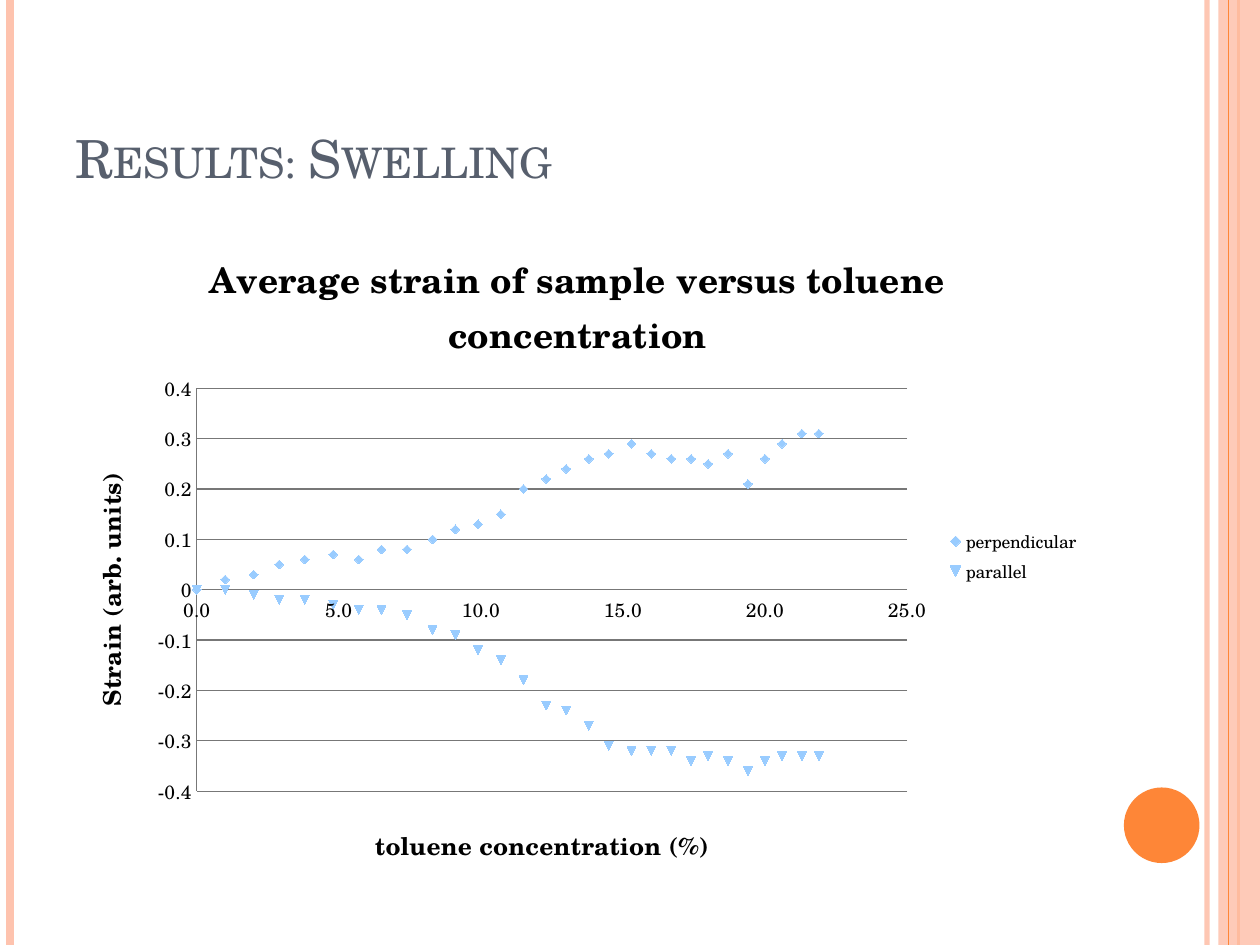
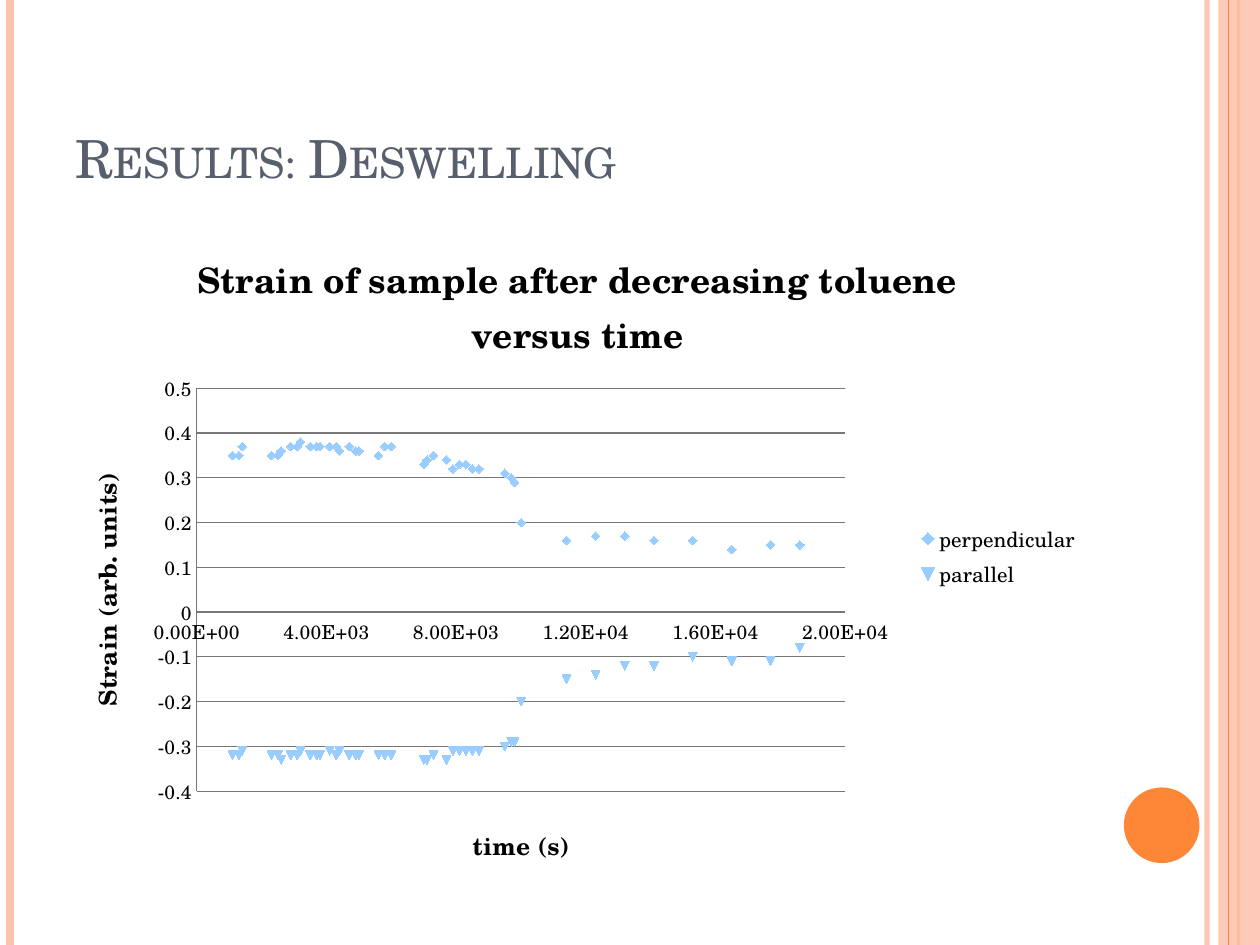
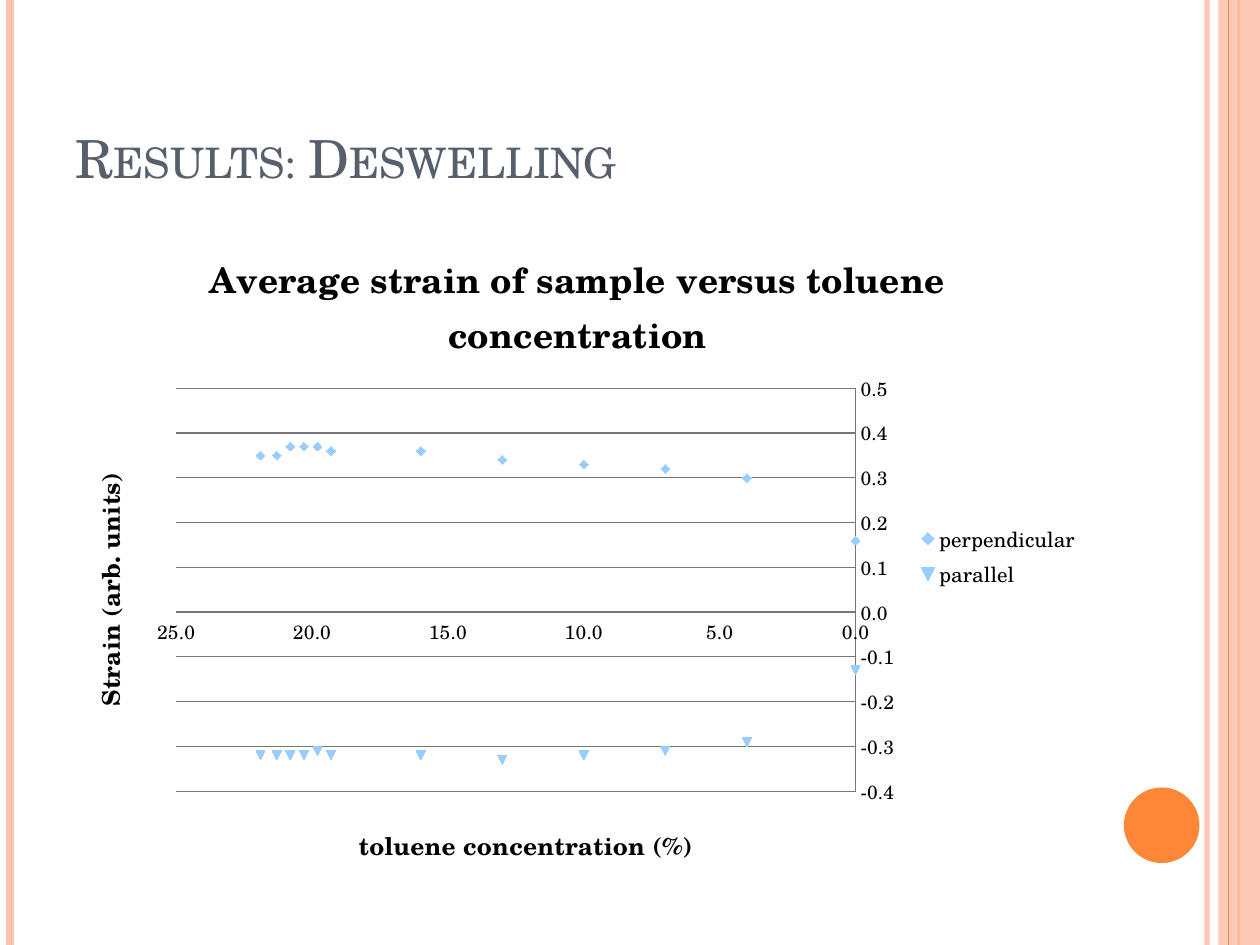
import dataclasses

import pptx
import pptx.chart.data
import pptx.dml.color
import pptx.enum.chart
import pptx.enum.shapes
import pptx.enum.text
import pptx.oxml
import pptx.oxml.ns
import pptx.util

Inches = pptx.util.Inches
Pt = pptx.util.Pt


@dataclasses.dataclass(frozen=True)
class Theme:
    font: str = "TeX Gyre Schola"
    heading: str = "575F6D"
    text: str = "000000"
    accent: str = "FE8637"
    pale: str = "FEC3AE"
    marker: str = "99CCFF"
    grid: str = "777777"
    heading_size: float = 30
    chart_title_size: float = 20
    axis_title_size: float = 14
    tick_size: float = 11
    chart_size: float = 10


@dataclasses.dataclass(frozen=True)
class Scale:
    title: str
    low: float
    high: float
    step: float
    number_format: str = "General"
    reverse: bool = False


@dataclasses.dataclass(frozen=True)
class Result:
    heading: str
    chart_title: str
    horizontal: Scale
    vertical: Scale
    plot_area: tuple  # left, top, width, height as shares of the chart
    legend_size: float
    x: list
    strains: dict


THEME = Theme()
WIDTH, HEIGHT = Inches(10), Inches(7.5)
LEFT, CONTENT_WIDTH = Inches(0.5), Inches(8.17)

SWELLING_X = [
    0, 1, 2, 2.9, 3.8, 4.8, 5.7, 6.5, 7.4, 8.3, 9.1, 9.9, 10.7, 11.5, 12.3,
    13, 13.8, 14.5, 15.3, 16, 16.7, 17.4, 18, 18.7, 19.4, 20, 20.6, 21.3, 21.9]
SWELLING = {
    "perpendicular": [
        0, 0.02, 0.03, 0.05, 0.06, 0.07, 0.06, 0.08, 0.08, 0.1, 0.12, 0.13,
        0.15, 0.2, 0.22, 0.24, 0.26, 0.27, 0.29, 0.27, 0.26, 0.26, 0.25, 0.27,
        0.21, 0.26, 0.29, 0.31, 0.31],
    "parallel": [
        0, 0, -0.01, -0.02, -0.02, -0.03, -0.04, -0.04, -0.05, -0.08, -0.09,
        -0.12, -0.14, -0.18, -0.23, -0.24, -0.27, -0.31, -0.32, -0.32, -0.32,
        -0.34, -0.33, -0.34, -0.36, -0.34, -0.33, -0.33, -0.33],
}
TIME_X = [
    1100, 1300, 1400, 2300, 2500, 2600, 2900, 3100, 3200, 3500, 3700, 3800,
    4100, 4300, 4400, 4700, 4900, 5000, 5600, 5800, 6000, 7000, 7100, 7300,
    7700, 7900, 8100, 8300, 8500, 8700, 9500, 9700, 9800, 10000, 11400, 12300,
    13200, 14100, 15300, 16500, 17700, 18600]
TIME = {
    "perpendicular": [
        0.35, 0.35, 0.37, 0.35, 0.35, 0.36, 0.37, 0.37, 0.38, 0.37, 0.37, 0.37,
        0.37, 0.37, 0.36, 0.37, 0.36, 0.36, 0.35, 0.37, 0.37, 0.33, 0.34, 0.35,
        0.34, 0.32, 0.33, 0.33, 0.32, 0.32, 0.31, 0.3, 0.29, 0.2, 0.16, 0.17,
        0.17, 0.16, 0.16, 0.14, 0.15, 0.15],
    "parallel": [
        -0.32, -0.32, -0.31, -0.32, -0.32, -0.33, -0.32, -0.32, -0.31, -0.32,
        -0.32, -0.32, -0.31, -0.32, -0.31, -0.32, -0.32, -0.32, -0.32, -0.32,
        -0.32, -0.33, -0.33, -0.32, -0.33, -0.31, -0.31, -0.31, -0.31, -0.31,
        -0.3, -0.29, -0.29, -0.2, -0.15, -0.14, -0.12, -0.12, -0.1, -0.11,
        -0.11, -0.08],
}
DESWELLING_X = [21.9, 21.3, 20.8, 20.3, 19.8, 19.3, 16, 13, 10, 7, 4, 0]
DESWELLING = {
    "perpendicular": [
        0.35, 0.35, 0.37, 0.37, 0.37, 0.36, 0.36, 0.34, 0.33, 0.32, 0.3, 0.16],
    "parallel": [
        -0.32, -0.32, -0.32, -0.32, -0.31, -0.32, -0.32, -0.33, -0.32, -0.31,
        -0.29, -0.13],
}

STRAIN = "Strain (arb. units)"
TOLUENE = "toluene concentration (%)"
TOLUENE_CHART = "Average strain of sample versus toluene concentration"
RESULTS = [
    Result("Results: Swelling", TOLUENE_CHART,
           Scale(TOLUENE, 0, 25, 5, "0.0"), Scale(STRAIN, -0.4, 0.4, 0.1),
           (0.13, 0.25, 0.69, 0.6), 10, SWELLING_X, SWELLING),
    Result("Results: Deswelling",
           "Strain of sample after decreasing toluene versus time",
           Scale("time (s)", 0, 20000, 4000, "0.00E+00"),
           Scale(STRAIN, -0.4, 0.5, 0.1),
           (0.13, 0.25, 0.63, 0.6), 12, TIME_X, TIME),
    Result("Results: Deswelling", TOLUENE_CHART,
           Scale(TOLUENE, 0, 25, 5, "0.0", reverse=True),
           Scale(STRAIN, -0.4, 0.5, 0.1, "0.0"),
           (0.11, 0.25, 0.66, 0.6), 12, DESWELLING_X, DESWELLING),
]


def rgb(code):
    return pptx.dml.color.RGBColor.from_string(code)


def set_font(font, size, color=THEME.text, bold=False):
    font.name = THEME.font
    font.size = Pt(size)
    font.bold = bold
    font.color.rgb = rgb(color)


def set_opacity(shape, percent):
    color = shape.element.xpath("./p:spPr//a:srgbClr")[0]
    alpha = pptx.oxml.parse_xml(
        f'<a:alpha {pptx.oxml.ns.nsdecls("a")} val="{percent * 1000}"/>')
    color.append(alpha)


def add_stripe(shapes, x, color, weight, opacity=100):
    """Draw a thin vertical line over the whole height of the slide."""
    stripe = shapes.add_connector(
        pptx.enum.shapes.MSO_CONNECTOR.STRAIGHT, Inches(x), 0, Inches(x), HEIGHT)
    stripe.line.color.rgb = rgb(color)
    stripe.line.width = Pt(weight)
    no_effects = pptx.oxml.parse_xml(
        f'<a:effectLst {pptx.oxml.ns.nsdecls("a")}/>')
    stripe.element.spPr.append(no_effects)
    if opacity < 100:
        set_opacity(stripe, opacity)
    return stripe


def add_solid(shapes, kind, left, top, width, height, color):
    solid = shapes.add_shape(kind, left, top, width, height)
    solid.shadow.inherit = False
    solid.fill.solid()
    solid.fill.fore_color.rgb = rgb(color)
    solid.line.fill.background()
    return solid


def decorate_master(master, slide):
    """Draw the shared bands on a slide, then move them behind the master's text."""
    kinds = pptx.enum.shapes.MSO_SHAPE
    shapes = slide.shapes
    decoration = [
        add_stripe(shapes, 9.58, THEME.pale, 3, opacity=93),
        add_stripe(shapes, 0.08, THEME.pale, 4.5),
        add_stripe(shapes, 9.83, THEME.accent, 1.5),
    ]
    band = add_solid(shapes, kinds.RECTANGLE, Inches(9.67), 0,
                     WIDTH - Inches(9.67), HEIGHT, THEME.pale)
    set_opacity(band, 87)
    decoration += [
        band,
        add_stripe(shapes, 9.75, THEME.accent, 0.75),
        add_solid(shapes, kinds.OVAL, Inches(8.92), Inches(6.25),
                  Inches(0.6), Inches(0.6), THEME.accent),
    ]
    for order, part in enumerate(decoration):
        part.element.xpath(".//p:cNvPr")[0].set("id", str(100 + order))
        master.shapes.element.insert(2 + order, part.element)


def add_heading(slide, words):
    heading = slide.shapes.title
    heading.left, heading.top = LEFT, Inches(0.3)
    heading.width, heading.height = CONTENT_WIDTH, Inches(1.25)
    frame = heading.text_frame
    frame.auto_size = pptx.enum.text.MSO_AUTO_SIZE.NONE
    frame.vertical_anchor = pptx.enum.text.MSO_ANCHOR.BOTTOM
    paragraph = frame.paragraphs[0]
    paragraph.alignment = pptx.enum.text.PP_ALIGN.LEFT
    run = paragraph.add_run()
    run.text = words
    set_font(run.font, THEME.heading_size, THEME.heading)
    run.font._element.set("cap", "small")


def write_chart_text(frame, words, size):
    run = frame.paragraphs[0].add_run()
    run.text = words
    set_font(run.font, size, bold=True)


def format_axis(axis, scale, gridlines):
    axis.minimum_scale, axis.maximum_scale = scale.low, scale.high
    axis.major_unit = scale.step
    axis.reverse_order = scale.reverse
    axis.major_tick_mark = pptx.enum.chart.XL_TICK_MARK.NONE
    axis.minor_tick_mark = pptx.enum.chart.XL_TICK_MARK.NONE
    axis.tick_labels.number_format = scale.number_format
    axis.tick_labels.number_format_is_linked = False
    set_font(axis.tick_labels.font, THEME.tick_size)
    axis.has_major_gridlines = gridlines
    lines = [axis.format.line]
    if gridlines:
        lines.append(axis.major_gridlines.format.line)
    for line in lines:
        line.color.rgb = rgb(THEME.grid)
        line.width = Pt(0.75)
    write_chart_text(axis.axis_title.text_frame, scale.title,
                     THEME.axis_title_size)


def place_plot_area(chart, shares):
    plot_area = chart.element.xpath(".//c:plotArea")[0]
    for layout in plot_area.xpath("./c:layout"):
        plot_area.remove(layout)
    values = "".join(f'<c:{name} val="{share}"/>'
                     for name, share in zip("xywh", shares))
    plot_area.insert(0, pptx.oxml.parse_xml(
        f'<c:layout {pptx.oxml.ns.nsdecls("c")}><c:manualLayout>'
        '<c:layoutTarget val="inner"/><c:xMode val="edge"/><c:yMode val="edge"/>'
        f'{values}</c:manualLayout></c:layout>'))


def add_strain_chart(slide, result):
    data = pptx.chart.data.XyChartData()
    for direction, strains in result.strains.items():
        series = data.add_series(direction)
        for x, strain in zip(result.x, strains):
            series.add_data_point(x, strain)
    chart = slide.shapes.add_chart(
        pptx.enum.chart.XL_CHART_TYPE.XY_SCATTER, LEFT, Inches(1.75),
        CONTENT_WIDTH, Inches(5.33), data).chart
    set_font(chart.font, THEME.chart_size)
    write_chart_text(chart.chart_title.text_frame, result.chart_title,
                     THEME.chart_title_size)
    chart.chart_title.include_in_layout = False

    format_axis(chart.category_axis, result.horizontal, gridlines=False)
    format_axis(chart.value_axis, result.vertical, gridlines=True)
    upright = chart.value_axis.axis_title.element.xpath(".//a:bodyPr")[0]
    upright.set("rot", "-5400000")
    upright.set("vert", "horz")

    chart.has_legend = True
    chart.legend.position = pptx.enum.chart.XL_LEGEND_POSITION.RIGHT
    chart.legend.include_in_layout = False
    set_font(chart.legend.font, result.legend_size)

    plot = chart.plots[0]
    plot.vary_by_categories = False
    styles = pptx.enum.chart.XL_MARKER_STYLE
    for series, style in zip(plot.series, (styles.DIAMOND, styles.AUTOMATIC)):
        series.format.line.fill.background()
        series.marker.style = style
        series.marker.size = 5
        series.marker.format.fill.solid()
        series.marker.format.fill.fore_color.rgb = rgb(THEME.marker)
        series.marker.format.line.fill.background()
    place_plot_area(chart, result.plot_area)


def main():
    deck = pptx.Presentation()
    deck.slide_width, deck.slide_height = WIDTH, HEIGHT
    title_only = deck.slide_layouts[5]
    for result in RESULTS:
        slide = deck.slides.add_slide(title_only)
        if len(deck.slides) == 1:
            decorate_master(deck.slide_master, slide)
        add_heading(slide, result.heading)
        add_strain_chart(slide, result)
    deck.save("out.pptx")


if __name__ == "__main__":
    main()
